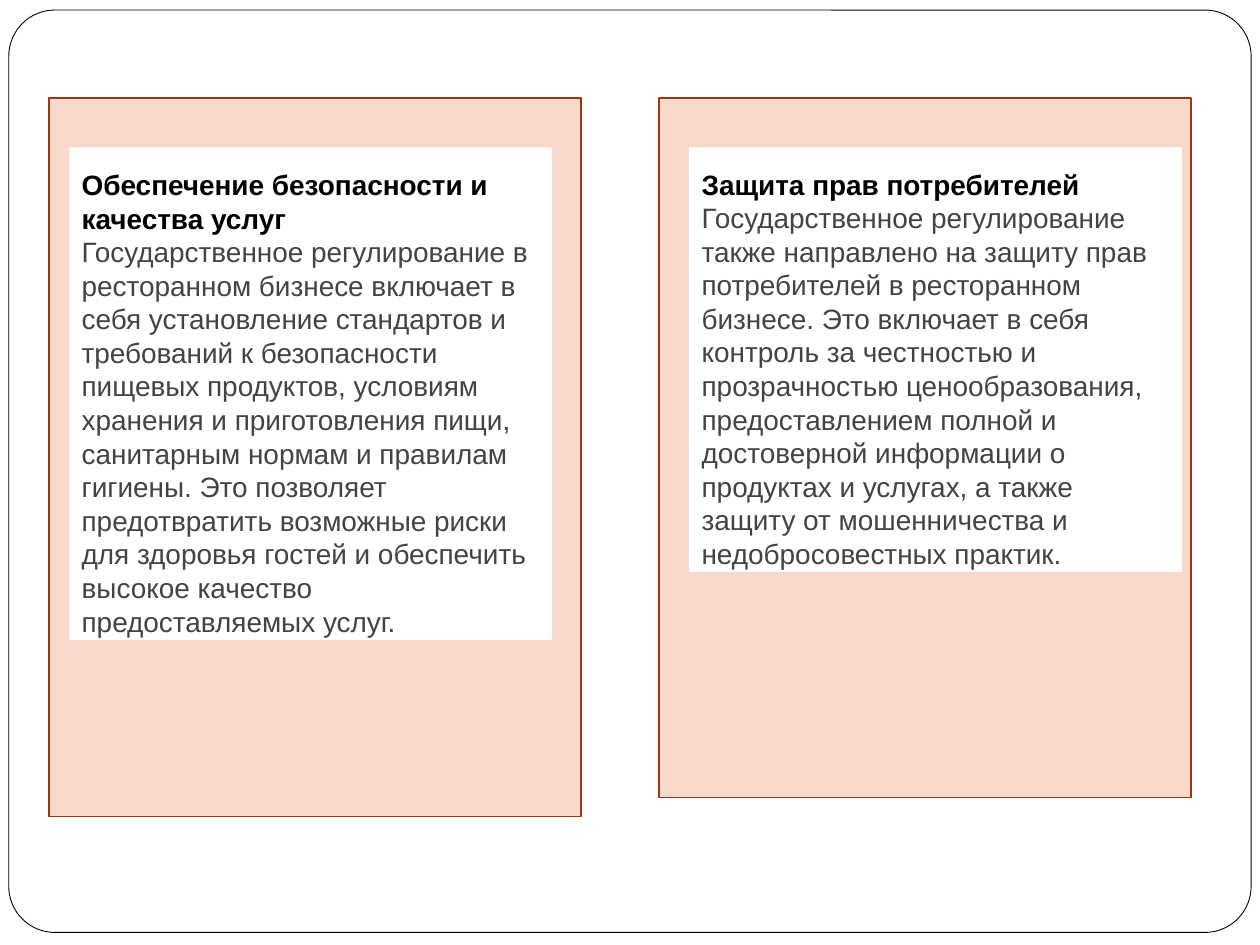
from pptx import Presentation
from pptx.dml.color import RGBColor as Rgb
from pptx.enum.shapes import MSO_SHAPE as Kind
from pptx.enum.text import MSO_ANCHOR as Anchor, MSO_AUTO_SIZE as Fit, PP_ALIGN as Align
from pptx.util import Inches, Pt

HUES = {"white": "FFFFFF", "peach": "FAD9CD", "rust": "9C3511",
        "black": "000000", "gray": "434343"}
COLS, ROWS = 100, 75

deck = Presentation()
deck.slide_width, deck.slide_height = Inches(10), Inches(7.5)
col, row = deck.slide_width / COLS, deck.slide_height / ROWS
slide = deck.slides.add_slide(deck.slide_layouts[6])


def hue(name):
    return Rgb.from_string(HUES[name])


def block(kind, left, top, wide, high, fill, edge=None, width=1):
    shape = slide.shapes.add_shape(
        kind, int(left * col), int(top * row), int(wide * col), int(high * row))
    shape.shadow.inherit = False
    shape.fill.solid()
    shape.fill.fore_color.rgb = hue(fill)
    if edge:
        shape.line.color.rgb = hue(edge)
        shape.line.width = Pt(width)
    else:
        shape.line.fill.background()
    return shape


frame = block(Kind.ROUNDED_RECTANGLE, 0.7, 0.8, 98.6, 73.2, "white", "black", 0.5)
frame.adjustments[0] = 0.05

panels = [(3.9, 57), (52.3, 55.5)]
for left, high in panels:
    block(Kind.RECTANGLE, left, 7.8, 42.2, high, "peach", "rust")

cards = [
    (5.5, 38.3, 39.1, "Обеспечение безопасности и качества услуг",
     "Государственное регулирование в ресторанном бизнесе включает в себя "
     "установление стандартов и требований к безопасности пищевых продуктов, "
     "условиям хранения и приготовления пищи, санитарным нормам и правилам "
     "гигиены. Это позволяет предотвратить возможные риски для здоровья гостей "
     "и обеспечить высокое качество предоставляемых услуг."),
    (54.7, 39.1, 33.7, "Защита прав потребителей",
     "Государственное регулирование также направлено на защиту прав "
     "потребителей в ресторанном бизнесе. Это включает в себя контроль за "
     "честностью и прозрачностью ценообразования, предоставлением полной и "
     "достоверной информации о продуктах и услугах, а также защиту от "
     "мошенничества и недобросовестных практик."),
]
for left, wide, high, head, body in cards:
    text = block(Kind.RECTANGLE, left, 11.7, wide, high, "white").text_frame
    text.word_wrap = True
    text.auto_size = Fit.SHAPE_TO_FIT_TEXT
    text.vertical_anchor = Anchor.MIDDLE
    text.margin_left = text.margin_right = int(col)
    text.margin_top, text.margin_bottom = int(1.4 * row), 0
    for part, tint, bold in [(head, "black", True), (body, "gray", False)]:
        para = text.paragraphs[0] if bold else text.add_paragraph()
        para.alignment = Align.LEFT
        run = para.add_run()
        run.text = part
        run.font.name = "Arial"
        run.font.size = Pt(16)
        run.font.bold = bold
        run.font.color.rgb = hue(tint)

deck.save("out.pptx")
